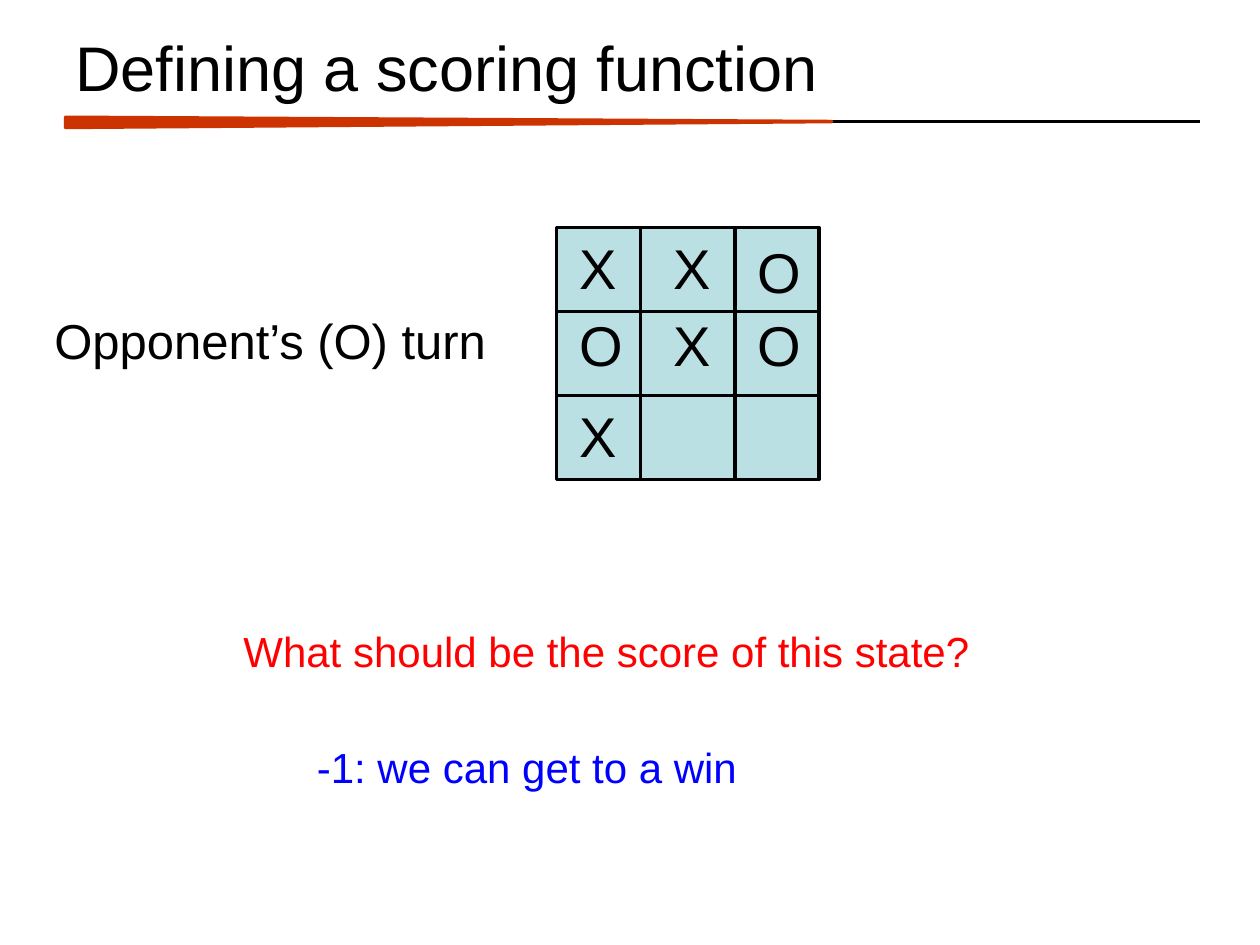
from lxml import etree
from pptx import Presentation
from pptx import util as u
from pptx.dml.color import RGBColor
from pptx.enum import shapes, text
from pptx.oxml import ns

BLACK = RGBColor(0x00, 0x00, 0x00)
RUST = RGBColor(0xCC, 0x33, 0x00)
RED = RGBColor(0xFF, 0x00, 0x00)
BLUE = RGBColor(0x00, 0x00, 0xFF)
PALE_BLUE = RGBColor(0xBB, 0xE0, 0xE3)


class SlideBuilder:
    font = "Arial"
    line_width = 2

    def __init__(self, slide):
        self.slide = slide

    def line(self, x1, y1, x2, y2):
        connector = self.slide.shapes.add_connector(
            shapes.MSO_CONNECTOR.STRAIGHT, u.Pt(x1), u.Pt(y1), u.Pt(x2), u.Pt(y2))
        connector.line.color.rgb = BLACK
        connector.line.width = u.Pt(self.line_width)
        etree.SubElement(connector._element.spPr, ns.qn("a:effectLst"))

    def shape(self, kind, left, top, width, height, fill, outline):
        shape = self.slide.shapes.add_shape(
            kind, u.Pt(left), u.Pt(top), u.Pt(width), u.Pt(height))
        shape.shadow.inherit = False
        shape.fill.solid()
        shape.fill.fore_color.rgb = fill
        shape.line.color.rgb = outline
        shape.line.width = u.Pt(self.line_width)
        return shape

    def label(self, words, left, top, width, height, size, color=BLACK, wrap=True):
        box = self.slide.shapes.add_textbox(
            u.Pt(left), u.Pt(top), u.Pt(width), u.Pt(height))
        frame = box.text_frame
        frame.word_wrap = wrap
        frame.auto_size = text.MSO_AUTO_SIZE.SHAPE_TO_FIT_TEXT
        run = frame.paragraphs[0].add_run()
        run.text = words
        run.font.name = self.font
        run.font.size = u.Pt(size)
        run.font.color.rgb = color
        return frame

    def title(self, words):
        frame = self.label(words, 36, 12, 648, 52, 36)
        frame.auto_size = text.MSO_AUTO_SIZE.NONE
        frame.vertical_anchor = text.MSO_ANCHOR.MIDDLE

    def underline(self):
        self.line(37.5, 69.4, 685.5, 69.4)
        wedge = self.shape(shapes.MSO_SHAPE.ISOSCELES_TRIANGLE,
                           253.5, -149, 5.8, 437.8, RUST, RUST)
        wedge.adjustments[0] = 0.42
        wedge.rotation = 90

    def board(self, left, top, columns, row_height, row_count):
        width, height = sum(columns), row_height * row_count
        self.shape(shapes.MSO_SHAPE.RECTANGLE, left, top, width, height, PALE_BLUE, BLACK)
        for column in range(1, len(columns)):
            x = left + sum(columns[:column])
            self.line(x, top, x, top + height)
        for row in range(1, row_count):
            y = top + row * row_height
            self.line(left, y, left + width, y)


def main():
    presentation = Presentation()
    presentation.slide_width = u.Pt(720)
    presentation.slide_height = u.Pt(540)
    slide = presentation.slides.add_slide(presentation.slide_layouts[6])
    builder = SlideBuilder(slide)

    builder.underline()
    builder.title("Defining a scoring function")
    builder.label("Opponent’s (O) turn", 24, 174, 264, 41, 28, wrap=False)
    builder.label("What should be the score of this state?",
                  132, 354, 433.5, 36, 24, RED, wrap=False)
    builder.label("-1: we can get to a win", 174, 420, 257, 36, 24, BLUE, wrap=False)

    builder.board(318, 130, (48, 54, 48), 48, 3)
    mark_lefts = (324, 378, 426)
    mark_rows = ((130, "XX"), (174, "OXO"), (226, "X"))
    for top, marks in mark_rows:
        for left, mark in zip(mark_lefts, marks):
            builder.label(mark, left, top, 48, 46, 32)
    builder.label("O", mark_lefts[2], 132, 48, 46, 32)

    presentation.save("out.pptx")


if __name__ == "__main__":
    main()
